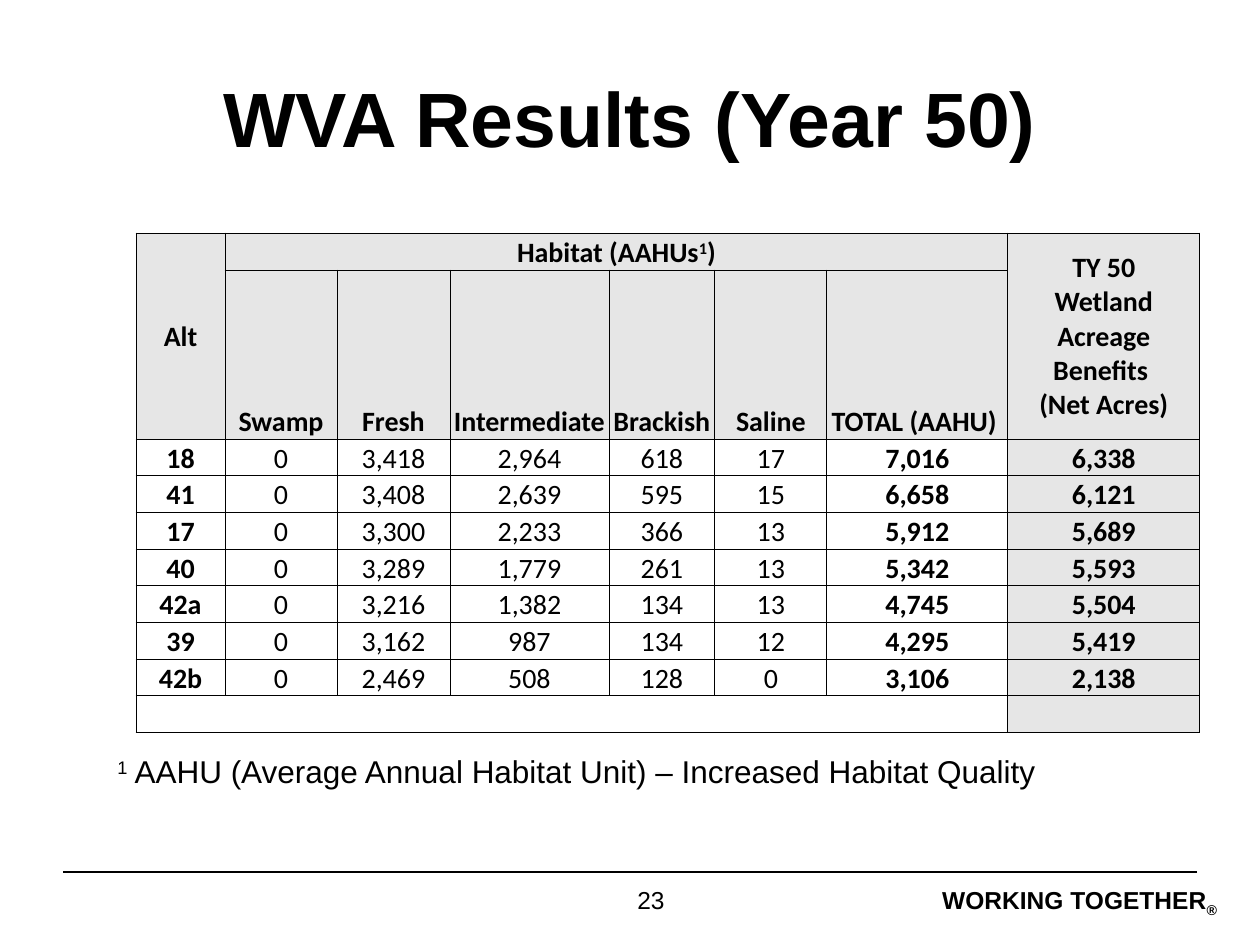
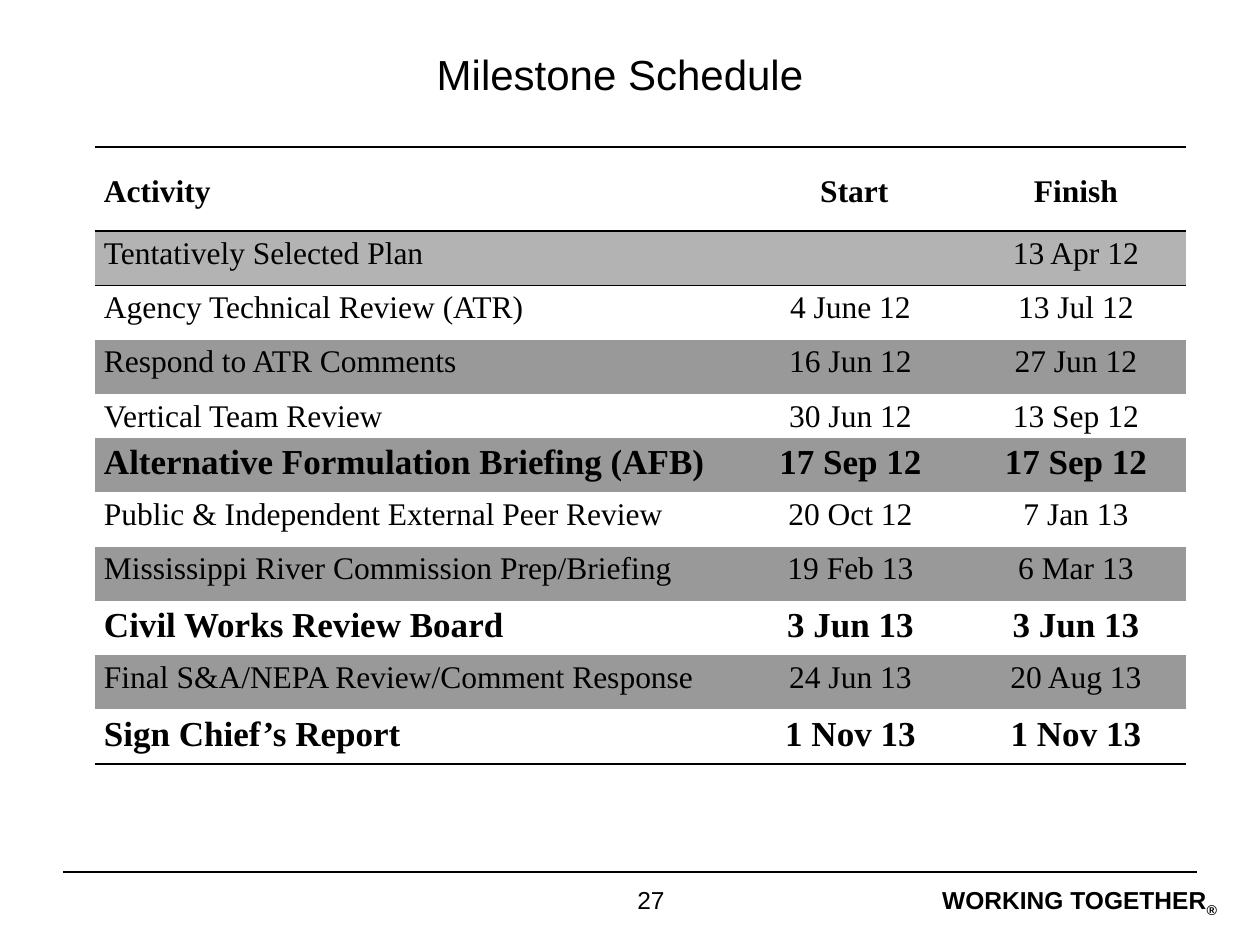
from collections import namedtuple

from lxml import etree
from pptx import Presentation
from pptx import util as u
from pptx.dml.color import RGBColor
from pptx.enum import shapes, text
from pptx.oxml.ns import qn

PX = 914400 / 126
COLORS = {"ink": "000000", "paper": "FFFFFF", "header": "E6E6E6",
          "selected": "B3B3B3", "band": "999999"}
ALIGN = text.PP_ALIGN
ANCHOR = text.MSO_ANCHOR

Look = namedtuple("Look", "font size bold", defaults=(False,))
BIG_TITLE = Look("Arial", 44, True)
SMALL_TITLE = Look("Arial", 24)
MOTTO = Look("Arial", 14, True)
PAGE_NUMBER = Look("Arial", 14)
FOOTNOTE = Look("Arial", 18)
HABITAT = Look("Calibri", 16)
MILESTONE = Look("Times New Roman", 18)
KEY_MILESTONE = Look("Times New Roman", 20, True)

HABITAT_COLUMNS = [89, 112, 113, 159, 106, 112, 181, 192]
HABITAT_NAMES = ["Swamp", "Fresh", "Intermediate", "Brackish", "Saline", "TOTAL (AAHU) "]
ALTERNATIVES = [
    ["18", "0", "3,418", "2,964", "618", "17", "7,016", "6,338"],
    ["41", "0", "3,408", "2,639", "595", "15", "6,658", "6,121"],
    ["17", "0", "3,300", "2,233", "366", "13", "5,912", "5,689"],
    ["40", "0", "3,289", "1,779", "261", "13", "5,342", "5,593"],
    ["42a", "0", "3,216", "1,382", "134", "13", "4,745", "5,504"],
    ["39", "0", "3,162", "987", "134", "12", "4,295", "5,419"],
    ["42b", "0", "2,469", "508", "128", "0", "3,106", "2,138"],
]
MILESTONE_COLUMNS = [640, 231, 220]
MILESTONES = [
    ["Activity", " Start", "Finish"],
    ["Tentatively Selected Plan", "", "13 Apr 12"],
    ["Agency Technical Review (ATR)", "4 June 12", "13 Jul 12"],
    ["Respond to ATR Comments", "16 Jun 12", "27 Jun 12"],
    ["Vertical Team Review", "30 Jun 12", "13 Sep 12"],
    ["Alternative Formulation Briefing (AFB)", "17 Sep 12", "17 Sep 12"],
    ["Public & Independent External Peer Review", "20 Oct 12", "7 Jan 13"],
    ["Mississippi River Commission Prep/Briefing", "19 Feb 13", "6 Mar 13"],
    ["Civil Works Review Board", "3 Jun 13", "3 Jun 13"],
    ["Final S&A/NEPA Review/Comment Response", "24 Jun 13", "20 Aug 13"],
    ["Sign Chief’s Report", "1 Nov 13", "1 Nov 13"],
]
KEY_ROWS = {5, 8, 10}
RULED_EDGES = {0, 1, 2, len(MILESTONES)}


def emu(px):
    return u.Emu(round(px * PX))


def color(name):
    return RGBColor.from_string(COLORS[name])


def write(frame, wording, look, align=ALIGN.CENTER, shift=30, spacing=None):
    for index, line in enumerate(wording.split("\n")):
        paragraph = frame.paragraphs[0] if index == 0 else frame.add_paragraph()
        paragraph.alignment = align
        paragraph.line_spacing = spacing
        for position, segment in enumerate(line.split("^")):
            if not segment:
                continue
            run = paragraph.add_run()
            run.text = segment
            run.font.name = look.font
            run.font.size = u.Pt(look.size)
            run.font.bold = look.bold
            run.font.color.rgb = color("ink")
            if position % 2:
                run.font._element.set("baseline", str(shift * 1000))
        if not line:
            end = etree.SubElement(paragraph._p, qn("a:endParaRPr"))
            end.set("sz", str(look.size * 100))


def add_label(slide, box, wording, look, align, inset=None, wrap=True, shift=30):
    frame = slide.shapes.add_textbox(*map(emu, box)).text_frame
    frame.word_wrap = wrap
    if inset is not None:
        frame.margin_left = frame.margin_right = emu(inset)
        frame.margin_top = frame.margin_bottom = emu(inset)
    write(frame, wording, look, align, shift)


def add_page(deck, title, title_box, look, anchor, number):
    slide = deck.slides.add_slide(deck.slide_layouts[5])
    heading = slide.shapes.title
    heading.left, heading.top, heading.width, heading.height = map(emu, title_box)
    heading.text_frame.auto_size = text.MSO_AUTO_SIZE.NONE
    heading.text_frame.vertical_anchor = anchor
    write(heading.text_frame, title, look)
    add_footer(slide, (63, 872, 1134, 73), number)
    return slide


def add_footer(slide, box, number):
    left, top, width, _ = box
    rule = slide.shapes.add_connector(
        shapes.MSO_CONNECTOR.STRAIGHT, emu(left + width), emu(top), emu(left), emu(top))
    rule.line.color.rgb = color("ink")
    rule.line.width = u.Pt(0.75)
    etree.SubElement(rule._element.spPr, qn("a:effectLst"))
    add_label(slide, (left + 795, top + 13, 359, 29), "WORKING TOGETHER^®^",
              MOTTO, ALIGN.RIGHT, inset=0, shift=-25)
    add_label(slide, (left + 441, top + 7, 294, 66), number, PAGE_NUMBER, ALIGN.CENTER)


def add_grid(slide, left, top, widths, heights):
    table = slide.shapes.add_table(
        len(heights), len(widths), emu(left), emu(top),
        emu(sum(widths)), emu(sum(heights))).table
    table.first_row = table.horz_banding = False
    for column, width in zip(table.columns, widths):
        column.width = emu(width)
    for row, height in zip(table.rows, heights):
        row.height = emu(height)
    return table


def style_cell(cell, fill, borders, insets, anchor):
    cell.margin_left, cell.margin_top, cell.margin_right, cell.margin_bottom = map(emu, insets)
    cell.vertical_anchor = anchor
    properties = cell._tc.get_or_add_tcPr()
    for side in "LRTB":
        points = borders.get(side, 0)
        edge = etree.SubElement(properties, qn(f"a:ln{side}"), w=str(u.Pt(points)))
        if points:
            paint = etree.SubElement(edge, qn("a:solidFill"))
            etree.SubElement(paint, qn("a:srgbClr"), val=COLORS["ink"])
        else:
            etree.SubElement(edge, qn("a:noFill"))
    if fill:
        cell.fill.solid()
        cell.fill.fore_color.rgb = color(fill)
    else:
        cell.fill.background()


def add_habitat_table(slide, left, top):
    rows = [["Alt", "Habitat (AAHUs^1^)"] + [""] * 5
            + ["TY 50\nWetland Acreage Benefits \n(Net Acres)"],
            [""] + HABITAT_NAMES + [""], *ALTERNATIVES, [""] * 8]
    body_rows = len(rows) - 2
    table = add_grid(slide, left, top, HABITAT_COLUMNS,
                     [37, 147] + [294 / body_rows] * body_rows)
    last_row, last_column = len(rows) - 1, len(HABITAT_COLUMNS) - 1
    for r, values in enumerate(rows):
        for c, value in enumerate(values):
            cell = table.cell(r, c)
            shaded = r < 2 or c == last_column
            spans_header = r == 0 and c in (0, last_column)
            style_cell(cell, "header" if shaded else "paper", dict.fromkeys("LRTB", 0.5),
                       (1, 1, 1, 0), ANCHOR.MIDDLE if spans_header else ANCHOR.BOTTOM)
            bold = r < 2 or c in (0, last_column - 1, last_column)
            write(cell.text_frame, value, HABITAT._replace(bold=bold))
    for first, last in [((0, 0), (1, 0)), ((0, 1), (0, last_column - 1)),
                        ((0, last_column), (1, last_column)),
                        ((last_row, 0), (last_row, last_column - 1))]:
        table.cell(*first).merge(table.cell(*last))


def add_milestone_table(slide, left, top):
    heights = [84] + [489 / 9] * 10
    heights[4] = 44
    table = add_grid(slide, left, top, MILESTONE_COLUMNS, heights)
    for r, values in enumerate(MILESTONES):
        fill = "selected" if r == 1 else "band" if r % 2 else None
        look = KEY_MILESTONE if r in KEY_ROWS else MILESTONE._replace(bold=r == 0)
        borders = {side: 1 for side, edge in (("T", r), ("B", r + 1)) if edge in RULED_EDGES}
        for c, value in enumerate(values):
            cell = table.cell(r, c)
            style_cell(cell, fill, borders, (9, 0, 9, 0),
                       ANCHOR.TOP if r else ANCHOR.MIDDLE)
            write(cell.text_frame, value, look,
                  ALIGN.CENTER if c else ALIGN.LEFT, spacing=1.15)


def build_results(deck):
    slide = add_page(deck, "WVA Results (Year 50)", (63, 38, 1134, 158),
                     BIG_TITLE, ANCHOR.MIDDLE, "23")
    add_label(slide, (105, 746, 953, 50),
              "^1^ AAHU (Average Annual Habitat Unit) – Increased Habitat Quality",
              FOOTNOTE, ALIGN.LEFT, wrap=False)
    add_habitat_table(slide, 136, 233)


def build_schedule(deck):
    slide = add_page(deck, "Milestone Schedule", (116, 42, 1008, 64),
                     SMALL_TITLE, ANCHOR.TOP, "27")
    add_milestone_table(slide, 95, 147)


def main():
    deck = Presentation()
    deck.slide_width, deck.slide_height = emu(1260), emu(945)
    build_results(deck)
    build_schedule(deck)
    deck.save("out.pptx")


if __name__ == "__main__":
    main()
